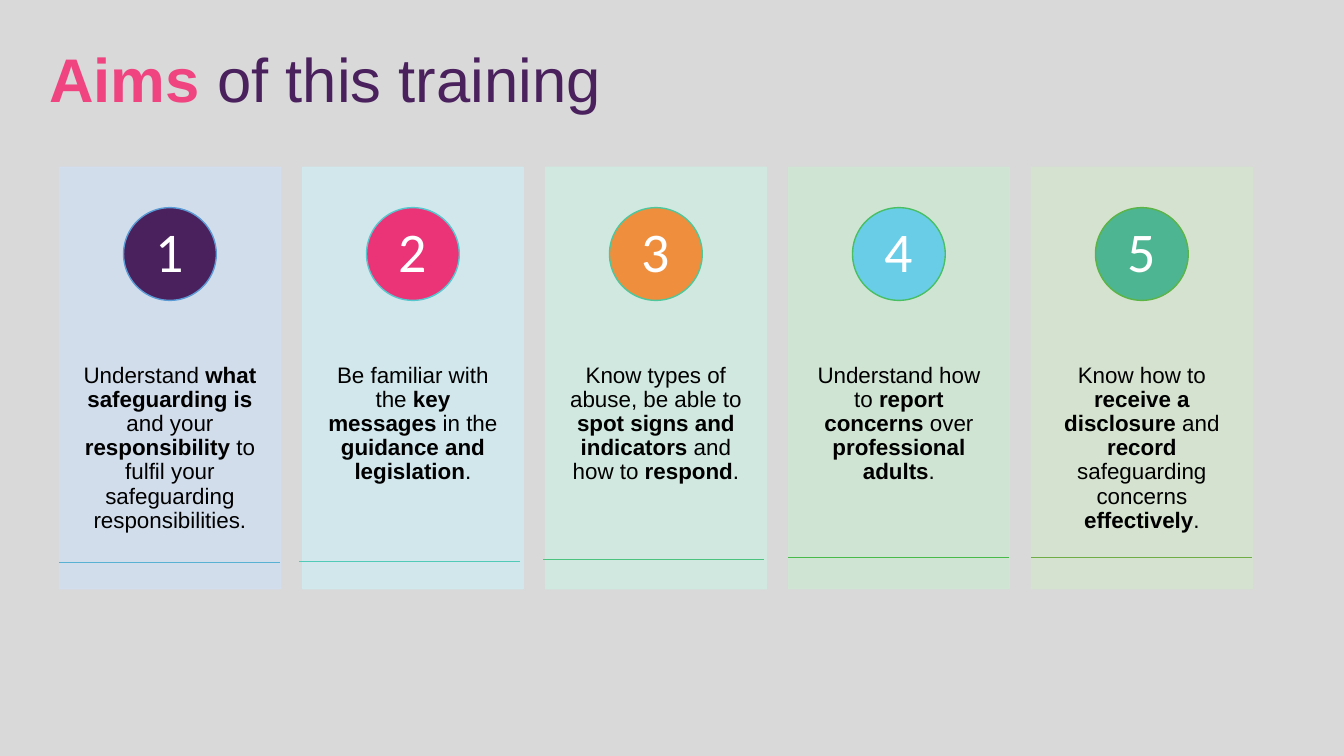
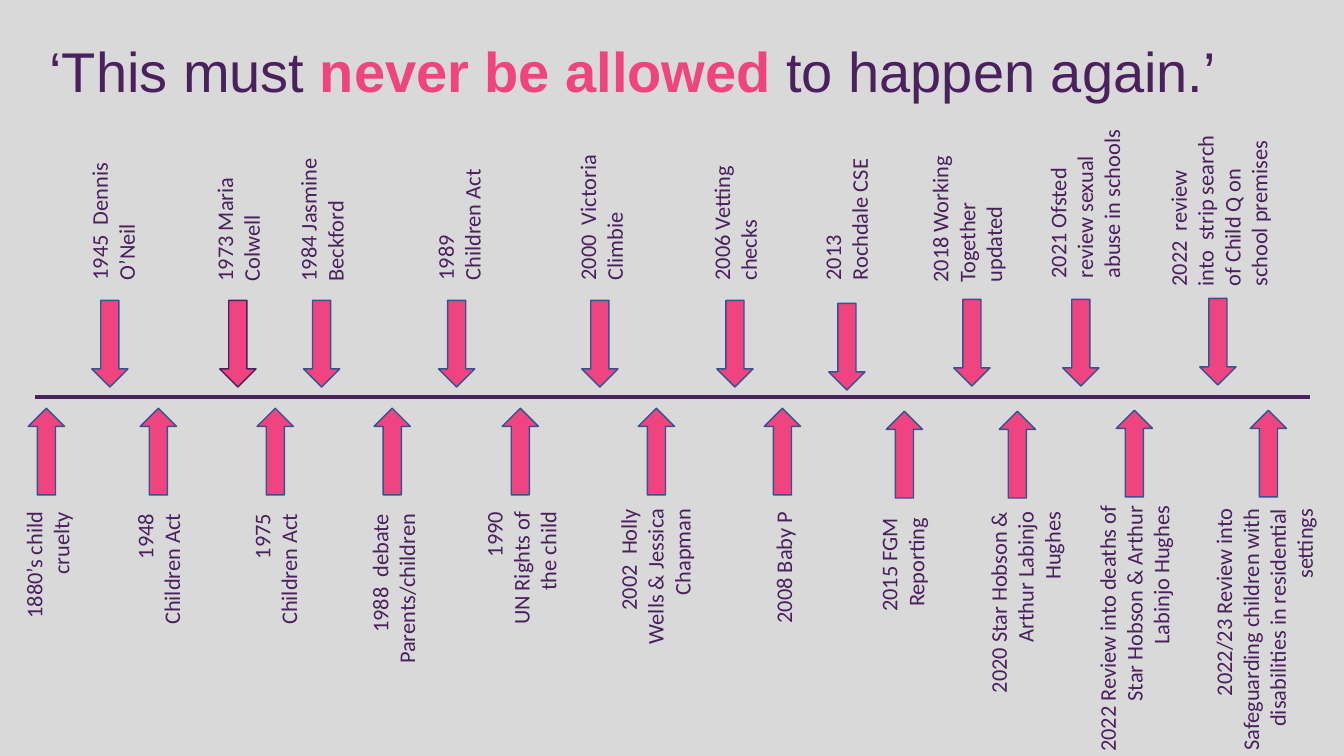
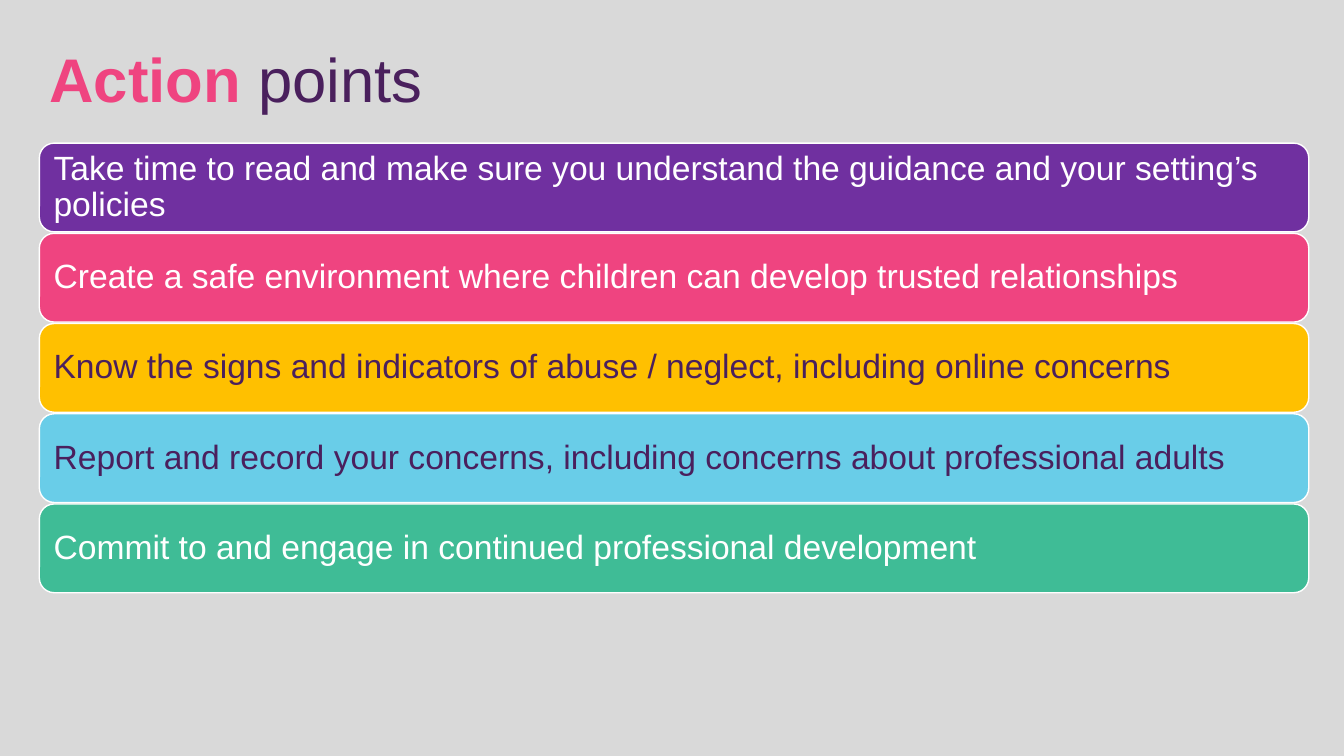
from collections import namedtuple

from lxml import etree
from pptx import Presentation
from pptx.dml.color import RGBColor
from pptx.enum.shapes import MSO_CONNECTOR, MSO_SHAPE
from pptx.enum.text import MSO_ANCHOR, MSO_AUTO_SIZE, PP_ALIGN
from pptx.oxml.ns import qn
from pptx.util import Inches, Pt

LEFT, CENTER, RIGHT = PP_ALIGN.LEFT, PP_ALIGN.CENTER, PP_ALIGN.RIGHT
TOP, MIDDLE = MSO_ANCHOR.TOP, MSO_ANCHOR.MIDDLE
RECTANGLE, ROUNDED, OVAL = MSO_SHAPE.RECTANGLE, MSO_SHAPE.ROUNDED_RECTANGLE, MSO_SHAPE.OVAL
DOWN_ARROW, STRAIGHT = MSO_SHAPE.DOWN_ARROW, MSO_CONNECTOR.STRAIGHT
NO_FIT = MSO_AUTO_SIZE.NONE

COLORS = {
    "background": "D9D9D9",
    "plum": "4A205D",
    "pink": "EF4480",
    "axis": "48225C",
    "arrow_edge": "325491",
    "black": "000000",
    "white": "FFFFFF",
    "purple": "7030A0",
    "amber": "FFC000",
    "sky": "69CDE8",
    "green": "3FBC96",
}

MARGIN = 0.39
CARD_LEFT, CARD_TOP, CARD_WIDTH, CARD_HEIGHT, CARD_PITCH = 0.59, 1.66, 2.19, 4.18, 2.41
BADGE_SIZE, BADGE_DROP = 0.92, 0.4
ROW_TOP, ROW_WIDTH, ROW_HEIGHT, ROW_PITCH = 1.42, 12.59, 0.88, 0.895
AXIS_Y = 3.94
ARROW_WIDTH, ARROW_HEIGHT = 0.36, 0.86
LABEL_PADDING, LABEL_LINE = 0.1, 0.27

Aim = namedtuple("Aim", "text card badge edge rule rule_shift rule_y")
Event = namedtuple("Event", "text label_x lines length label_edge arrow_x arrow_top edge",
                   defaults=["arrow_edge"])

AIMS = [
    Aim("Understand *what safeguarding is *and your *responsibility* to fulfil your "
        "safeguarding responsibilities.", "D2DEEF", "4A205D", "5B9BD5", "58B1D2", 0, 5.58),
    Aim("Be familiar with the *key messages *in the *guidance and legislation*.",
        "D1E9ED", "EB3377", "55C7CE", "52CAB8", -0.03, 5.57),
    Aim("Know types of abuse, be able to *spot signs and indicators* and how to *respond*.",
        "D0EAE1", "EF8E3D", "4FC79C", "4CC37F", -0.02, 5.55),
    Aim("Understand how to *report concerns *over *professional adults*.",
        "D0E6D4", "69CDE8", "49BF64", "47BA49", 0, 5.53),
    Aim("Know how to *receive a disclosure* and *record* safeguarding concerns *effectively*.",
        "D5E3CF", "4DB591", "5CB447", "70AD47", 0, 5.53),
]

EVENTS_ABOVE = [
    Event("1945  Dennis O’Neil", 1.12, 2, 1.66, 2.88, 1.09, 2.98),
    Event("1973 Maria Colwell", 2.36, 2, 1.5, 2.89, 2.36, 2.98, "axis"),
    Event("1984 Jasmine Beckford", 3.19, 2, 1.66, 2.89, 3.19, 2.98),
    Event("1989\nChildren Act", 4.55, 2, 1.5, 2.88, 4.53, 2.98),
    Event("2000  Victoria Climbie", 5.96, 2, 1.65, 2.88, 5.95, 2.98),
    Event("2006 Vetting checks", 7.29, 2, 1.5, 2.88, 7.29, 2.98),
    Event("2013 Rochdale CSE", 8.39, 2, 1.51, 2.88, 8.4, 3.01),
    Event("2018 Working Together updated", 9.59, 3, 1.5, 2.9, 9.64, 2.97),
    Event("2021 Ofsted review sexual abuse in schools", 10.76, 3, 1.73, 2.86, 10.72, 2.97),
    Event("2022  review into  strip search of Child Q on school premises",
          12.09, 4, 1.73, 2.94, 12.08, 2.96),
]

EVENTS_BELOW = [
    Event("1880’s child cruelty", 0.47, 2, 1.62, 4.98, 0.46, 4.05),
    Event("1948\nChildren Act", 1.57, 2, 1.5, 5, 1.57, 4.05),
    Event("1975\nChildren Act", 2.73, 2, 1.5, 5, 2.73, 4.05),
    Event("1988  debate\nParents/children", 3.9, 2, 1.73, 5, 3.89, 4.05),
    Event("1990\nUN Rights of the child", 5.17, 3, 1.5, 4.98, 5.16, 4.05),
    Event("2002  Holly Wells & Jessica Chapman", 6.5, 3, 1.73, 4.95, 6.51, 4.05),
    Event("2008 Baby P", 7.77, 1, 1.5, 4.98, 7.76, 4.05),
    Event("2015 FGM Reporting", 8.95, 2, 1.5, 5.04, 8.97, 4.08),
    Event("2020 Star Hobson & Arthur Labinjo Hughes", 10.17, 3, 2.12, 4.98, 10.09, 4.08),
    Event("2022 Review into deaths of  Star Hobson & Arthur Labinjo Hughes",
          11.25, 3, 2.68, 4.92, 11.25, 4.07),
    Event("2022/23 Review into Safeguarding children with disabilities in residential settings",
          12.54, 4, 2.68, 4.95, 12.58, 4.07),
]

ACTIONS = [
    ("Take time to read and make sure you understand the guidance and your setting’s policies",
     "purple", "white"),
    ("Create a safe environment where children can develop trusted relationships",
     "pink", "white"),
    ("Know the signs and indicators of abuse / neglect, including online concerns",
     "amber", "plum"),
    ("Report and record your concerns, including concerns about professional adults",
     "sky", "plum"),
    ("Commit to and engage in continued professional development", "green", "white"),
]


def rgb(color):
    return RGBColor.from_string(COLORS.get(color, color))


def write(shape, text, size, color, font="Arial", align=LEFT, anchor=MIDDLE,
          margins=(0.1, 0.05, 0.1, 0.05), spacing=0.9, strong=None):
    frame = shape.text_frame
    frame.word_wrap = True
    frame.auto_size = NO_FIT
    frame.vertical_anchor = anchor
    (frame.margin_left, frame.margin_top,
     frame.margin_right, frame.margin_bottom) = map(Inches, margins)
    frame.text = text.replace("*", "")
    if "*" in text:
        paragraph = frame.paragraphs[0]
        paragraph.clear()
        for index, part in enumerate(text.split("*")):
            if part:
                run = paragraph.add_run()
                run.text = part
                run.font.bold = index % 2 == 1
    for paragraph in frame.paragraphs:
        paragraph.alignment = align
        paragraph.line_spacing = spacing
        for run in paragraph.runs:
            run.font.name = font
            run.font.size = Pt(size)
            run.font.color.rgb = rgb(strong if strong and run.font.bold else color)


def add_title_slide(prs, title, size=44, width=11.5, height=0.85, anchor=MIDDLE):
    slide = prs.slides.add_slide(prs.slide_layouts[5])
    heading = slide.shapes.title
    heading.left, heading.top = Inches(MARGIN), Inches(MARGIN)
    heading.width, heading.height = Inches(width), Inches(height)
    write(heading, title, size, "plum", anchor=anchor, strong="pink")
    return slide


def add_block(slide, preset, left, top, width, height, fill, edge, opacity=None):
    block = slide.shapes.add_shape(preset, *map(Inches, (left, top, width, height)))
    block.shadow.inherit = False
    block.fill.solid()
    block.fill.fore_color.rgb = rgb(fill)
    block.line.color.rgb = rgb(edge)
    block.line.width = Pt(1)
    if opacity:
        for tint in block._element.spPr.iter(qn("a:srgbClr")):
            etree.SubElement(tint, qn("a:alpha"), val=str(opacity * 1000))
    return block


def add_rule(slide, left, y, width, color, weight):
    rule = slide.shapes.add_connector(
        STRAIGHT, Inches(left), Inches(y), Inches(left + width), Inches(y))
    rule.line.color.rgb = rgb(color)
    rule.line.width = Pt(weight)
    etree.SubElement(rule._element.spPr, qn("a:effectLst"))


def add_aim(slide, index, aim):
    left = CARD_LEFT + index * CARD_PITCH
    card = add_block(slide, RECTANGLE, left, CARD_TOP, CARD_WIDTH, CARD_HEIGHT,
                     aim.card, aim.card, opacity=90)
    write(card, aim.text, 16, "black", align=CENTER, anchor=TOP,
          margins=(0.17, 1.95, 0.17, 0.1))
    badge = add_block(slide, OVAL, left + (CARD_WIDTH - BADGE_SIZE) / 2,
                      CARD_TOP + BADGE_DROP, BADGE_SIZE, BADGE_SIZE, aim.badge, aim.edge)
    write(badge, str(index + 1), 40, "white", font="Calibri", align=CENTER,
          margins=(0, 0, 0, 0))
    add_rule(slide, left + aim.rule_shift, aim.rule_y, CARD_WIDTH, aim.rule, 1)


def add_event(slide, event, above):
    arrow = add_block(slide, DOWN_ARROW, event.arrow_x - ARROW_WIDTH / 2, event.arrow_top,
                      ARROW_WIDTH, ARROW_HEIGHT, "pink", event.edge)
    arrow.rotation = 0 if above else 180
    depth = LABEL_PADDING + event.lines * LABEL_LINE
    middle = event.label_edge + event.length / 2 * (-1 if above else 1)
    label = slide.shapes.add_textbox(
        Inches(event.label_x - event.length / 2), Inches(middle - depth / 2),
        Inches(event.length), Inches(depth))
    label.rotation = 270
    write(label, event.text, 16, "plum", font="Calibri",
          align=LEFT if above else RIGHT, anchor=TOP, spacing=1.0)


def add_action(slide, index, text, fill, color):
    row = add_block(slide, ROUNDED, MARGIN, ROW_TOP + index * ROW_PITCH,
                    ROW_WIDTH, ROW_HEIGHT, fill, "white")
    write(row, text, 24, color, margins=(0.1, 0.1, 0.1, 0.1))


def main():
    prs = Presentation()
    prs.slide_width, prs.slide_height = Inches(13.33), Inches(7.5)
    backdrop = prs.slide_master.background.fill
    backdrop.solid()
    backdrop.fore_color.rgb = rgb("background")

    aims = add_title_slide(prs, "*Aims *of this training")
    for index, aim in enumerate(AIMS):
        add_aim(aims, index, aim)

    timeline = add_title_slide(prs, "‘This must *never be allowed *to happen again.’",
                               size=40, width=12.79, height=0.69, anchor=TOP)
    add_rule(timeline, 0.35, AXIS_Y, 12.64, "axis", 3)
    for events, above in ((EVENTS_ABOVE, True), (EVENTS_BELOW, False)):
        for event in events:
            add_event(timeline, event, above)

    actions = add_title_slide(prs, "*Action* points")
    for index, action in enumerate(ACTIONS):
        add_action(actions, index, *action)

    prs.save("out.pptx")


if __name__ == "__main__":
    main()
